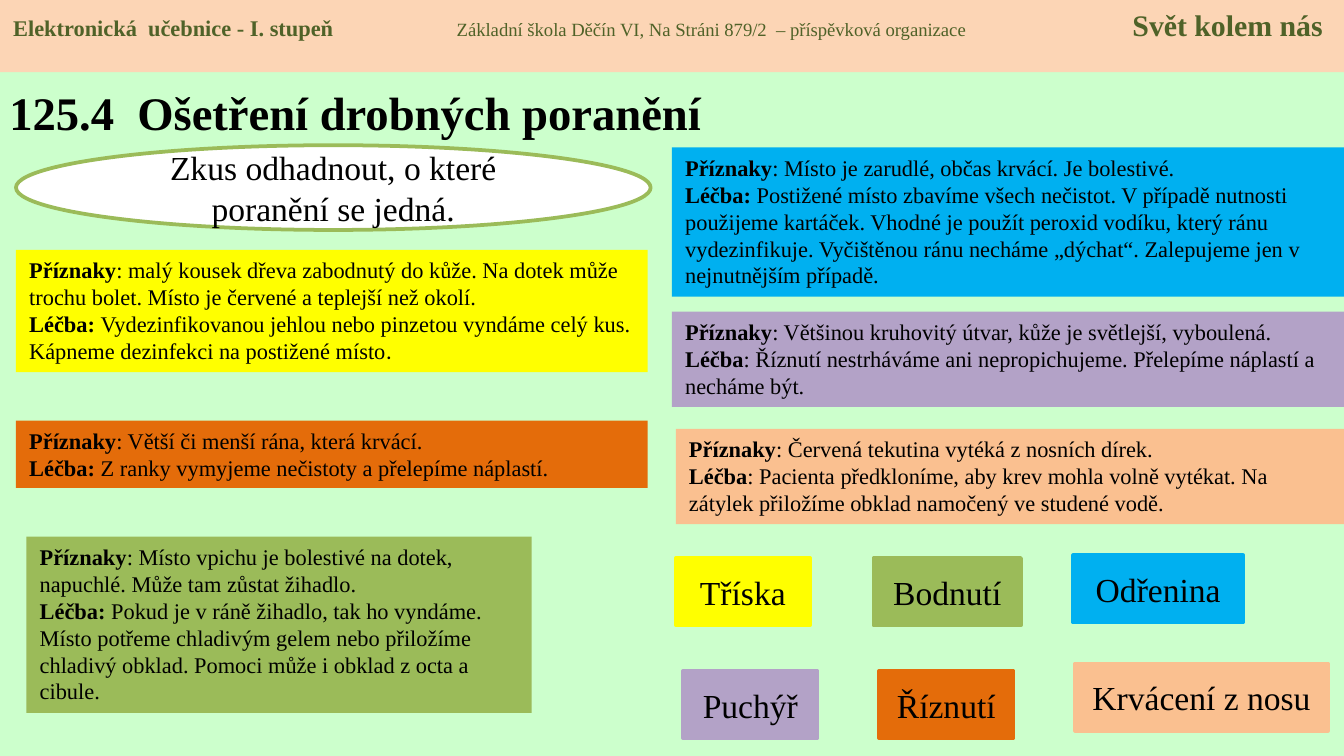
from dataclasses import dataclass

from lxml import etree
from pptx import Presentation
from pptx.dml.color import RGBColor
from pptx.enum import shapes, text
from pptx.oxml import ns
from pptx.util import Pt


@dataclass(frozen=True)
class Theme:
    face: str = "Times New Roman"
    alt: str = "Calibri"
    page: str = "CCFFCC"
    band: str = "FCD5B5"
    moss: str = "4F6228"
    ink: str = "000000"
    white: str = "FFFFFF"
    yellow: str = "FFFF00"
    orange: str = "E46C0A"
    green: str = "9BBB59"
    blue: str = "00B0F0"
    violet: str = "B3A2C7"
    peach: str = "FAC090"
    title: float = 25
    head: float = 16
    label: float = 18
    body: float = 12
    small: float = 10


T = Theme()
KIND = shapes.MSO_SHAPE
MID = text.MSO_ANCHOR.MIDDLE
TOP = text.MSO_ANCHOR.TOP
LEFT = text.PP_ALIGN.LEFT
MAIN = text.PP_ALIGN.CENTER


def rgb(code):
    return RGBColor.from_string(code)


def put(item, form):
    for name, value in form.items():
        setattr(item, name, value)


def write(para, words, size, bold=False, tint=T.ink, face=T.face):
    run = para.add_run()
    run.text = words
    put(run.font, {"name": face, "size": Pt(size), "bold": bold})
    run.font.color.rgb = rgb(tint)


def block(slide, box, fill, kind=KIND.RECTANGLE, edge=None, anchor=TOP):
    shape = slide.shapes.add_shape(kind, *map(Pt, box))
    shape.shadow.inherit = False
    shape.fill.solid()
    shape.fill.fore_color.rgb = rgb(fill)
    if edge:
        shape.line.color.rgb = rgb(edge)
        shape.line.width = Pt(2)
    else:
        shape.line.fill.background()
    put(shape.text_frame, {"word_wrap": True, "vertical_anchor": anchor})
    return shape.text_frame


def header(slide, box):
    para = block(slide, box, T.band).paragraphs[0]
    para.alignment = LEFT
    tabs = etree.SubElement(para._p.get_or_add_pPr(), ns.qn("a:tabLst"))
    for stop in (237.6, 599.6):
        etree.SubElement(tabs, ns.qn("a:tab"), pos=str(Pt(stop)), algn="l")
    write(para, "Elektronická  učebnice - I. stupeň\t", T.body, True, T.moss)
    write(para, "Základní škola Děčín VI, Na Stráni 879/2  – příspěvková organizace\t",
          T.small, False, T.moss)
    write(para, "Svět kolem nás", T.head, True, T.moss)


def heading(slide, box):
    title = slide.shapes.title
    put(title, dict(zip(("left", "top", "width", "height"), map(Pt, box))))
    put(title.text_frame, {"word_wrap": True, "vertical_anchor": MID,
                           "margin_left": Pt(5), "auto_size": text.MSO_AUTO_SIZE.NONE})
    para = title.text_frame.paragraphs[0]
    para.alignment = LEFT
    write(para, "125.4  Ošetření drobných poranění", T.title, True)


def label(slide, box, words, fill, edge, kind=KIND.RECTANGLE):
    para = block(slide, box, fill, kind, edge, MID).paragraphs[0]
    para.alignment = MAIN
    write(para, words, T.label)


def card(slide, box, fill, signs, lead, cure, stop=""):
    frame = block(slide, box, fill)
    for num, (head, rest) in enumerate((("Příznaky", signs), (lead, cure))):
        para = frame.add_paragraph() if num else frame.paragraphs[0]
        para.alignment = LEFT
        write(para, head, T.body, True)
        write(para, rest, T.body)
    if stop:
        write(para, stop, T.body, face=T.alt)


CARDS = (
    ((8.6, 133.9, 338.4, 65.5), T.yellow,
     ": malý kousek dřeva zabodnutý do kůže. Na dotek může trochu bolet. "
     "Místo je červené a teplejší než okolí.",
     "Léčba: ", "Vydezinfikovanou jehlou nebo pinzetou vyndáme celý kus. "
     "Kápneme dezinfekci na postižené místo", "."),
    ((8.6, 225.4, 338.4, 36), T.orange,
     ": Větší či menší rána, která krvácí.",
     "Léčba: ", "Z ranky vymyjeme nečistoty a přelepíme náplastí."),
    ((14.2, 287.5, 270.7, 94.5), T.green,
     ": Místo vpichu je bolestivé na dotek, napuchlé. Může tam zůstat žihadlo.",
     "Léčba: ", "Pokud je v ráně žihadlo, tak ho vyndáme. Místo potřeme chladivým "
     "gelem nebo přiložíme chladivý obklad. Pomoci může i obklad z octa a cibule."),
    ((360, 79, 360, 80), T.blue,
     ": Místo je zarudlé, občas krvácí. Je bolestivé.",
     "Léčba: ", "Postižené místo zbavíme všech nečistot. V případě nutnosti použijeme "
     "kartáček. Vhodné je použít peroxid vodíku, který ránu vydezinfikuje. "
     "Vyčištěnou ránu necháme „dýchat“. Zalepujeme jen v nejnutnějším případě."),
    ((360, 167, 360, 51), T.violet,
     ": Většinou kruhovitý útvar, kůže je světlejší, vyboulená.",
     "Léčba", ": Říznutí nestrháváme ani nepropichujeme. "
     "Přelepíme náplastí a necháme být."),
    ((362, 229.8, 358, 51), T.peach,
     ": Červená tekutina vytéká z nosních dírek.",
     "Léčba", ": Pacienta předkloníme, aby krev mohla volně vytékat. "
     "Na zátylek přiložíme obklad namočený ve studené vodě."),
)

NAMES = (
    ("Tříska", T.yellow, 362, 299, 72),
    ("Puchýř", T.violet, 366, 359.5, 72),
    ("Odřenina", T.blue, 575, 297.5, 91),
    ("Bodnutí", T.green, 468, 299, 79),
    ("Říznutí", T.orange, 471, 359.5, 72),
    ("Krvácení z nosu", T.peach, 576, 355.5, 135.5),
)


def main():
    deck = Presentation()
    put(deck, {"slide_width": Pt(720), "slide_height": Pt(405)})
    slide = deck.slides.add_slide(deck.slide_layouts[5])
    slide.background.fill.solid()
    slide.background.fill.fore_color.rgb = rgb(T.page)
    heading(slide, (0, 36.7, 572, 46.8))
    header(slide, (0, 0, 720, 38.7))
    label(slide, (8.6, 77.8, 340, 45.4), "Zkus odhadnout, o které poranění se jedná.",
          T.white, T.green, KIND.OVAL)
    for item in CARDS:
        card(slide, *item)
    for words, tint, left, top, wide in NAMES:
        label(slide, (left, top, wide, 36), words, tint, tint)
    deck.save("out.pptx")


if __name__ == "__main__":
    main()
